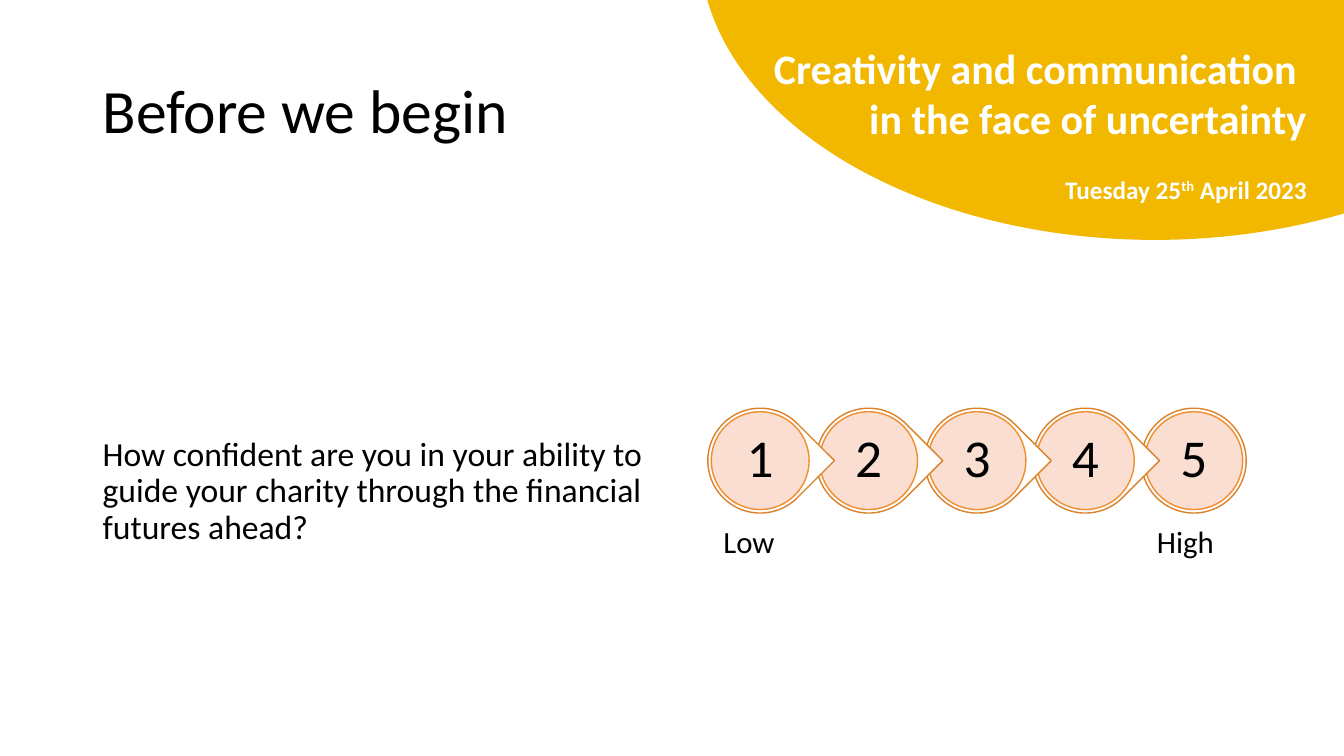
from pptx import Presentation
from pptx import util as u
from pptx.dml.color import RGBColor
from pptx.enum import shapes, text
from pptx.oxml.ns import qn
from lxml import etree

THEME = dict(
    font="Calibri", black="000000", white="FFFFFF", gold="F2B800",
    peach="F9DBCD", rim="DA8129", disc_line="F08E2D",
    title=44, banner=30, date=18, body=24, number=38, label=22,
)
W, H = 13.33, 7.5
STEPS = 5
FIRST_X, LAST_X, MID_Y = 7.54, 11.84, 4.57
PITCH = (LAST_X - FIRST_X) / (STEPS - 1)
RIM, DISC, NUMBER = 1.04, 0.97, 0.69

prs = Presentation()
prs.slide_width, prs.slide_height = u.Inches(W), u.Inches(H)
s = prs.slides.add_slide(prs.slide_layouts[6])


def add_shape(kind, x, y, w, h, fill, line=None):
    sp = s.shapes.add_shape(kind, *map(u.Inches, (x, y, w, h)))
    sp.shadow.inherit = False
    sp.fill.solid()
    sp.fill.fore_color.rgb = RGBColor.from_string(THEME[fill])
    if line:
        sp.line.color.rgb = RGBColor.from_string(THEME[line])
        sp.line.width = u.Pt(1)
    else:
        sp.line.fill.background()
    return sp


def add_text(x, y, w, h, paragraphs, color="black", inset=(0.1, 0.05), spacing=0.9,
             align=text.PP_ALIGN.LEFT, anchor=text.MSO_ANCHOR.TOP, bold=False):
    tf = s.shapes.add_textbox(*map(u.Inches, (x, y, w, h))).text_frame
    tf.word_wrap = True
    tf.vertical_anchor = anchor
    tf.margin_left = tf.margin_right = u.Inches(inset[0])
    tf.margin_top = tf.margin_bottom = u.Inches(inset[1])
    for i, (words, size) in enumerate(paragraphs):
        p = tf.add_paragraph() if i else tf.paragraphs[0]
        p.text = words
        p.alignment, p.line_spacing = align, spacing
        p.font.name, p.font.size, p.font.bold = THEME["font"], u.Pt(THEME[size]), bold
        p.font.color.rgb = RGBColor.from_string(THEME[color])
    return tf


add_text(0.92, 0.4, 11.5, 1.45, [("Before we begin", "title")],
         anchor=text.MSO_ANCHOR.MIDDLE)
question = add_text(0.92, 2.74, 5.64, 4.03, [(
    "How confident are you in your ability to guide your charity "
    "through the financial futures ahead?", "body")])
question.margin_top = u.Inches(1.6)

add_shape(shapes.MSO_SHAPE.OVAL, 6.94, -3.44, 9.03, 5.82, "gold")
banner = add_text(7.18, 0.37, 5.88, 1.72, [
    ("Creativity and communication \vin the face of uncertainty", "banner"),
    ("Tuesday 25", "date")],
    color="white", spacing=1.0, align=text.PP_ALIGN.RIGHT, bold=True)
p = banner.paragraphs[1]
p.space_before = u.Pt(22)
r = p.add_run()
r.text = "th"
r.font._element.set("baseline", "30000")
p.add_run().text = " April 2023"

for i in reversed(range(STEPS)):
    x = FIRST_X + i * PITCH
    last = i == STEPS - 1
    kind = shapes.MSO_SHAPE.OVAL if last else shapes.MSO_SHAPE.TEAR
    rim = add_shape(kind, x - RIM / 2, MID_Y - RIM / 2, RIM, RIM, "white", "rim")
    if not last:
        rim.rotation = 45
    disc = add_shape(shapes.MSO_SHAPE.OVAL, x - DISC / 2, MID_Y - DISC / 2,
                     DISC, DISC, "peach", "disc_line")
    tint = disc.fill._xPr.find(qn("a:solidFill"))[0]
    etree.SubElement(tint, qn("a:alpha")).set("val", "90000")
    add_text(x - NUMBER / 2, MID_Y - NUMBER / 2, NUMBER, NUMBER, [(str(i + 1), "number")],
             inset=(0.05, 0.05), align=text.PP_ALIGN.CENTER, anchor=text.MSO_ANCHOR.MIDDLE)

for x, word in ((FIRST_X, "Low"), (LAST_X, "High")):
    add_text(x - DISC / 2, 5.11, DISC, 0.57, [(word, "label")], inset=(0.12, 0.12))

prs.save("out.pptx")
